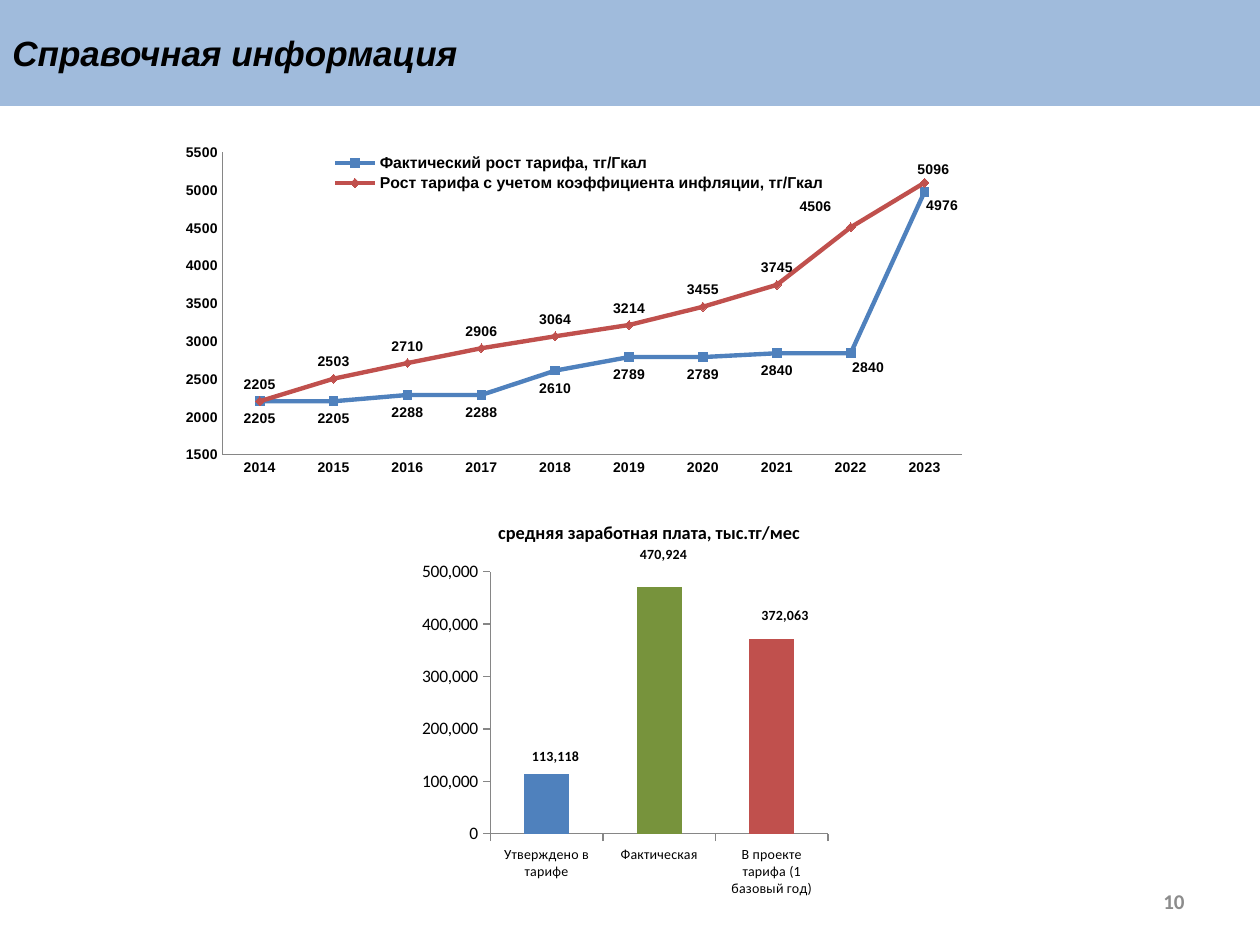
from dataclasses import dataclass

from lxml import etree
from pptx import Presentation
from pptx.chart.data import CategoryChartData
from pptx.dml.color import RGBColor
from pptx.enum.chart import (XL_CHART_TYPE, XL_LABEL_POSITION, XL_LEGEND_POSITION,
                             XL_MARKER_STYLE, XL_TICK_MARK)
from pptx.enum.shapes import MSO_SHAPE
from pptx.enum.text import MSO_ANCHOR, PP_ALIGN
from pptx.oxml.ns import qn
from pptx.util import Inches, Pt

LINE_CHART, COLUMN_CHART = XL_CHART_TYPE.LINE_MARKERS, XL_CHART_TYPE.COLUMN_CLUSTERED
ABOVE, BELOW = XL_LABEL_POSITION.ABOVE, XL_LABEL_POSITION.BELOW
OUTSIDE = XL_LABEL_POSITION.OUTSIDE_END
SQUARE, DIAMOND = XL_MARKER_STYLE.SQUARE, XL_MARKER_STYLE.DIAMOND
NO_TICK, TICK_OUT = XL_TICK_MARK.NONE, XL_TICK_MARK.OUTSIDE
LEGEND_BOTTOM = XL_LEGEND_POSITION.BOTTOM
RECTANGLE = MSO_SHAPE.RECTANGLE
MIDDLE, LEFT, RIGHT = MSO_ANCHOR.MIDDLE, PP_ALIGN.LEFT, PP_ALIGN.RIGHT

COLORS = {"band": "A0BBDC", "text": "000000", "page": "8C8C8C", "axis": "868686",
          "blue": "4F81BD", "green": "77933C", "red": "C0504D"}
NO_LEADER_LINES = (
    '<c:extLst xmlns:c="http://schemas.openxmlformats.org/drawingml/2006/chart">'
    '<c:ext uri="{CE6537A1-D6FC-4f65-9D91-7224C49458BB}" '
    'xmlns:c15="http://schemas.microsoft.com/office/drawing/2012/chart">'
    '<c15:showLeaderLines val="0"/></c:ext></c:extLst>')


@dataclass
class TariffSeries:
    name: str
    values: tuple
    color: str
    marker: int
    label_position: int
    label_offsets: dict


@dataclass
class Salary:
    category: str
    value: int
    color: str
    label_offset: tuple


TARIFFS = [
    TariffSeries("Фактический рост тарифа, тг/Гкал",
                 (2205, 2205, 2288, 2288, 2610, 2789, 2789, 2840, 2840, 4976),
                 "blue", SQUARE, BELOW, {8: (0.02, -0.01), 9: (0.02, -0.01)}),
    TariffSeries("Рост тарифа с учетом коэффициента инфляции, тг/Гкал",
                 (2205, 2503, 2710, 2906, 3064, 3214, 3455, 3745, 4506, 5096),
                 "red", DIAMOND, ABOVE, {8: (-0.04, -0.01), 9: (0.01, 0.01)}),
]
SALARY_TITLE = "средняя заработная плата, тыс.тг/мес"
SALARIES = [
    Salary("Утверждено в тарифе", 113118, "blue", (0.02, -0.01)),
    Salary("Фактическая", 470924, "green", (0.01, -0.04)),
    Salary("В проекте тарифа (1 базовый год)", 372063, "red", (0.03, -0.02)),
]


def rgb(color: str) -> RGBColor:
    return RGBColor.from_string(COLORS[color])


def apply_format(target, values: dict) -> None:
    for name, value in values.items():
        setattr(target, name, value)


def style_font(font, name: str, size: float, color: str = "text",
               bold: bool = False, italic: bool = False) -> None:
    apply_format(font, {"name": name, "size": Pt(size), "bold": bold, "italic": italic})
    font.color.rgb = rgb(color)


def fill_solid(target, color: str) -> None:
    target.fill.solid()
    target.fill.fore_color.rgb = rgb(color)


def write_text(shape, text: str, alignment: int, **font_values) -> None:
    apply_format(shape.text_frame, {"word_wrap": True, "vertical_anchor": MIDDLE})
    paragraph = shape.text_frame.paragraphs[0]
    paragraph.alignment = alignment
    run = paragraph.add_run()
    run.text = text
    style_font(run.font, **font_values)


def set_layout(parent, index: int, values: dict, inner: bool = False) -> None:
    """Give a chart part a manual layout, in fractions of the chart."""
    for old_layout in parent.findall(qn("c:layout")):
        parent.remove(old_layout)
    layout = etree.Element(qn("c:layout"))
    manual = etree.SubElement(layout, qn("c:manualLayout"))
    settings = {"layoutTarget": "inner"} if inner else {}
    if "w" in values:
        settings.update(xMode="edge", yMode="edge")
    for tag, value in {**settings, **values}.items():
        etree.SubElement(manual, qn(f"c:{tag}")).set("val", str(value))
    parent.insert(index, layout)


def add_chart(slide, kind: int, box: tuple, data, plot_layout: tuple, **font_values):
    chart = slide.shapes.add_chart(kind, *map(Inches, box), data).chart
    style_font(chart.font, **font_values)
    chart.plots[0].vary_by_categories = False
    set_layout(chart.plots[0]._element.getparent(), 0,
               dict(zip("xywh", plot_layout)), inner=True)
    return chart


def style_axes(chart, tick: int, scale: dict, number_format: str) -> None:
    for axis in (chart.category_axis, chart.value_axis):
        apply_format(axis, {"major_tick_mark": tick, "minor_tick_mark": NO_TICK,
                            "has_major_gridlines": False})
        axis.format.line.color.rgb = rgb("axis")
        axis.format.line.width = Pt(0.75)
    apply_format(chart.value_axis, scale)
    apply_format(chart.value_axis.tick_labels,
                 {"number_format": number_format, "number_format_is_linked": False})


def add_labels(series, position: int, offsets: dict, number_format: str, font: str) -> None:
    labels = series.data_labels
    apply_format(labels, {"show_value": True, "position": position,
                          "number_format": number_format,
                          "number_format_is_linked": False})
    style_font(labels.font, font, 8, bold=True)
    for index, (x, y) in offsets.items():
        label = series.points[index].data_label
        style_font(label.font, font, 8, bold=True)
        label.position = position
        element = next(item for item in labels._element.findall(qn("c:dLbl"))
                       if item.find(qn("c:idx")).get("val") == str(index))
        set_layout(element, 1, {"x": x, "y": y})
    # Moved labels stay free of leader lines
    for leader_lines in labels._element.findall(qn("c:showLeaderLines")):
        leader_lines.set("val", "0")
    labels._element.append(etree.fromstring(NO_LEADER_LINES))


def add_tariff_chart(slide) -> None:
    data = CategoryChartData(number_format="0")
    data.categories = [str(year) for year in range(2014, 2024)]
    for tariff in TARIFFS:
        data.add_series(tariff.name, tariff.values)
    chart = add_chart(slide, LINE_CHART, (1.14, 1.07, 6.98, 2.76), data,
                      (0.09, 0.05, 0.84, 0.87), name="Arial", size=8, bold=True)
    chart.has_title = False
    style_axes(chart, NO_TICK, {"minimum_scale": 1500, "maximum_scale": 5500,
                                "major_unit": 500}, "0")
    for series, tariff in zip(chart.plots[0].series, TARIFFS):
        series.smooth = False
        series.format.line.color.rgb = rgb(tariff.color)
        series.format.line.width = Pt(2.5)
        apply_format(series.marker, {"style": tariff.marker, "size": 5})
        fill_solid(series.marker.format, tariff.color)
        series.marker.format.line.color.rgb = rgb(tariff.color)
        add_labels(series, tariff.label_position, tariff.label_offsets, "0", "Arial")
    chart.has_legend = True
    apply_format(chart.legend, {"position": LEGEND_BOTTOM, "include_in_layout": False})
    style_font(chart.legend.font, "Arial", 9, bold=True)
    set_layout(chart.legend._element, 1, {"x": 0.21, "y": 0.05, "w": 0.57, "h": 0.12})


def add_salary_chart(slide) -> None:
    data = CategoryChartData(number_format="#,##0")
    data.categories = [salary.category for salary in SALARIES]
    data.add_series(SALARY_TITLE, [salary.value for salary in SALARIES])
    chart = add_chart(slide, COLUMN_CHART, (3.35, 3.99, 3.54, 3.65), data,
                      (0.15, 0.15, 0.76, 0.57), name="Calibri", size=10)
    chart.has_legend = False
    style_axes(chart, TICK_OUT, {"minimum_scale": 0, "maximum_scale": 500000,
                                 "major_unit": 100000}, "#,##0")
    style_font(chart.category_axis.tick_labels.font, "Calibri", 8)
    chart.plots[0].gap_width = 150
    series = chart.plots[0].series[0]
    fill_solid(series.format, "blue")
    for index, salary in enumerate(SALARIES):
        fill_solid(series.points[index].format, salary.color)
    offsets = {index: salary.label_offset for index, salary in enumerate(SALARIES)}
    add_labels(series, OUTSIDE, offsets, "#,##0", "Calibri")
    chart.has_title = True
    write_title = chart.chart_title.text_frame.paragraphs[0].add_run()
    write_title.text = SALARY_TITLE
    style_font(write_title.font, "Calibri", 10.5, bold=True)
    set_layout(chart.chart_title._element, 1,
               {"xMode": "edge", "yMode": "edge", "x": 0.16, "y": 0.03})


def main() -> None:
    presentation = Presentation()
    apply_format(presentation, {"slide_width": Inches(10), "slide_height": Inches(7.5)})
    slide = presentation.slides.add_slide(presentation.slide_layouts[6])
    # Heading band
    band = slide.shapes.add_shape(RECTANGLE, *map(Inches, (0, 0, 10, 0.84)))
    band.shadow.inherit = False
    fill_solid(band, "band")
    band.line.fill.background()
    write_text(band, "Справочная информация", LEFT, name="Arial", size=20,
               bold=True, italic=True)
    # Page number
    page_number = slide.shapes.add_textbox(*map(Inches, (7.17, 6.95, 2.33, 0.4)))
    write_text(page_number, "10", RIGHT, name="Calibri", size=12, color="page", bold=True)
    # Charts
    add_tariff_chart(slide)
    add_salary_chart(slide)
    presentation.save("out.pptx")


if __name__ == "__main__":
    main()
